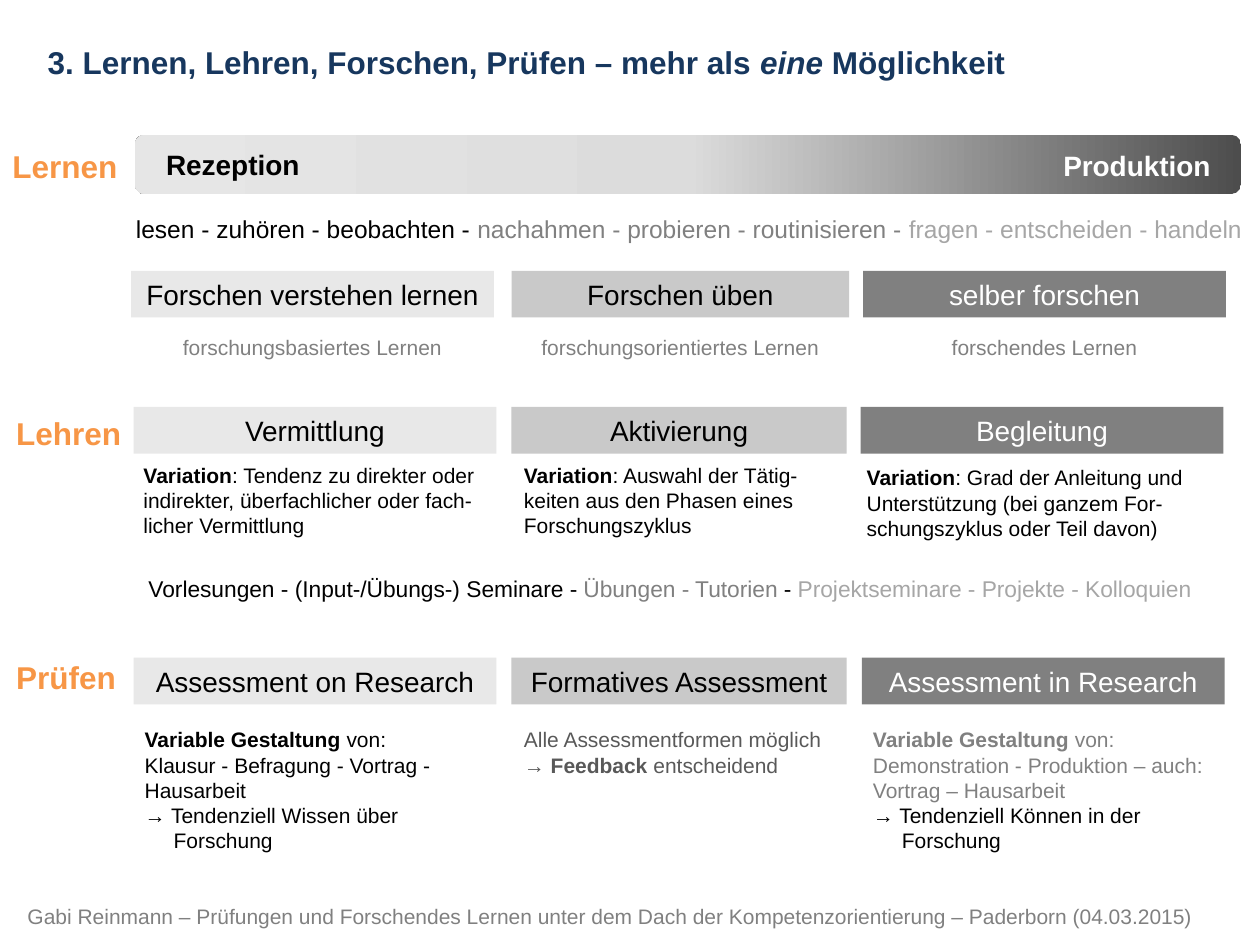
"""Builds a slide on variants of learning, teaching and assessing through research."""
from copy import deepcopy

from pptx import Presentation
from pptx import util as u
from pptx.dml.color import RGBColor
from pptx.enum import shapes, text

PX = 9144
BLACK = RGBColor(0x00, 0x00, 0x00)
WHITE = RGBColor(0xFF, 0xFF, 0xFF)
NAVY = RGBColor(0x17, 0x37, 0x5E)
ORANGE = RGBColor(0xF7, 0x96, 0x46)
CHARCOAL = RGBColor(0x4D, 0x4D, 0x4D)
DARK = RGBColor(0x59, 0x59, 0x59)
GREY = RGBColor(0x80, 0x80, 0x80)
PALE = RGBColor(0xA6, 0xA6, 0xA6)
SILVER = RGBColor(0xC9, 0xC9, 0xC9)
MIST = RGBColor(0xDC, 0xDC, 0xDC)
CLOUD = RGBColor(0xE6, 0xE6, 0xE6)
LIGHT = RGBColor(0xE8, 0xE8, 0xE8)

COLUMN_STYLES = [(LIGHT, BLACK), (SILVER, BLACK), (GREY, WHITE)]
HEADINGS = [
    (215, [(104, 288), (406, 268), (685, 288)],
     ["Forschen verstehen lernen", "Forschen üben", "selber forschen"]),
    (323, [(106, 288), (406, 266), (683, 288)],
     ["Vermittlung", "Aktivierung", "Begleitung"]),
    (522, [(106, 288), (406, 266), (684, 288)],
     ["Assessment on Research", "Formatives Assessment", "Assessment in Research"]),
]
LEARNING_FORMS = ["forschungsbasiertes Lernen", "forschungsorientiertes Lernen",
                  "forschendes Lernen"]
ROW_LABELS = [("Lernen", 0, 112, 104), ("Lehren", 3, 324, 104), ("Prüfen", 3, 517, 100)]
VARIATIONS = [
    (104, 362, 284, ": Tendenz zu direkter oder indirekter, überfachlicher oder fach-licher Vermittlung"),
    (406, 362, 266, ": Auswahl der Tätig-keiten aus den Phasen eines Forschungszyklus"),
    (678, 364, 289, ": Grad der Anleitung und Unterstützung (bei ganzem For-schungszyklus oder Teil davon)"),
]
BOLD = {"bold": True}


class SlideBuilder:
    """Holds the style and the current slide."""

    font_name = "Arial"
    hanging = 23

    def __init__(self, slide):
        self.slide = slide

    def fill_text(self, frame, paragraphs, size, color, bold=False, centered=False, wrap=True):
        """Fills a frame; a paragraph is a list of (text, run style) pairs."""
        frame.word_wrap = wrap
        frame.auto_size = text.MSO_AUTO_SIZE.SHAPE_TO_FIT_TEXT
        for index, pieces in enumerate(paragraphs):
            paragraph = frame.add_paragraph() if index else frame.paragraphs[0]
            paragraph.alignment = text.PP_ALIGN.CENTER if centered else text.PP_ALIGN.LEFT
            font = paragraph.font
            font.name, font.size, font.bold = self.font_name, u.Pt(size), bold
            font.color.rgb = color
            if pieces[0][0].startswith("→"):
                properties = paragraph._p.get_or_add_pPr()
                properties.set("marL", str(self.hanging * PX))
                properties.set("indent", str(-self.hanging * PX))
            for content, style in pieces:
                for line, part in enumerate(content.split("\n")):
                    if line:
                        paragraph.add_line_break()
                    run = paragraph.add_run()
                    run.text = part
                    if "bold" in style:
                        run.font.bold = style["bold"]
                    if "italic" in style:
                        run.font.italic = style["italic"]
                    if "color" in style:
                        run.font.color.rgb = style["color"]

    def text_box(self, left, top, width, height, paragraphs, size, color, **options):
        """Adds a text box."""
        box = self.slide.shapes.add_textbox(*(n * PX for n in (left, top, width, height)))
        self.fill_text(box.text_frame, paragraphs, size, color, **options)

    def label(self, left, top, width, height, content, size, color, bold=True):
        """Adds one unwrapped line of text."""
        self.text_box(left, top, width, height, [[(content, {})]], size, color,
                      bold=bold, wrap=False)

    def plain_shape(self, kind, left, top, width, height):
        """Adds a shape without shadow or outline."""
        shape = self.slide.shapes.add_shape(kind, *(n * PX for n in (left, top, width, height)))
        shape.shadow.inherit = False
        shape.line.fill.background()
        return shape

    def heading(self, left, top, width, content, fill, ink):
        """Adds a filled column heading."""
        shape = self.plain_shape(shapes.MSO_SHAPE.RECTANGLE, left, top, width, 37)
        shape.fill.solid()
        shape.fill.fore_color.rgb = fill
        self.fill_text(shape.text_frame, [[(content, {})]], 16, ink, centered=True)

    def gradient_bar(self, left, top, width, height, colors):
        """Adds a rounded bar shaded from right to left."""
        shape = self.plain_shape(shapes.MSO_SHAPE.ROUNDED_RECTANGLE, left, top, width, height)
        shape.fill.gradient()
        shape.fill.gradient_angle = 180
        first = shape.fill.gradient_stops[0]._gs
        for _ in colors[2:]:
            first.addnext(deepcopy(first))
        for index, (stop, color) in enumerate(zip(shape.fill.gradient_stops, colors)):
            stop.position = index / (len(colors) - 1)
            stop.color.rgb = color


def main():
    presentation = Presentation()
    presentation.slide_width, presentation.slide_height = 1000 * PX, 750 * PX
    builder = SlideBuilder(presentation.slides.add_slide(presentation.slide_layouts[6]))

    builder.label(12, 712, 946, 30, "Gabi Reinmann – Prüfungen und Forschendes Lernen unter dem Dach "
                  "der Kompetenzorientierung – Paderborn (04.03.2015)", 12, GREY, bold=False)
    builder.text_box(28, 29, 825, 40, [[
        ("3. Lernen, Lehren, Forschen, Prüfen – mehr als ", {}),
        ("eine", {"italic": True}), (" Möglichkeit", {})]], 18, NAVY, bold=True, wrap=False)

    builder.gradient_bar(107, 107, 878, 47, [CHARCOAL, MIST, CLOUD])
    builder.label(122, 112, 127, 37, "Rezeption", 16, BLACK)
    builder.label(834, 113, 139, 37, "Produktion", 16, WHITE)
    for content, left, top, width in ROW_LABELS:
        builder.label(left, top, width, 40, content, 18, ORANGE)

    builder.text_box(98, 165, 902, 34, [[
        ("lesen - zuhören - beobachten - ", {}),
        ("nachahmen - probieren - routinisieren - ", {"color": GREY}),
        ("fragen - entscheiden - handeln", {"color": PALE})]], 14, BLACK)
    builder.text_box(108, 451, 865, 32, [[
        ("Vorlesungen - (Input-/Übungs-) Seminare - ", {}),
        ("Übungen - Tutorien ", {"color": GREY}), ("- ", {}),
        ("Projektseminare - Projekte - Kolloquien", {"color": PALE})]], 13, BLACK)

    for top, columns, titles in HEADINGS:
        for (left, width), title, (fill, ink) in zip(columns, titles, COLUMN_STYLES):
            builder.heading(left, top, width, title, fill, ink)
    for (left, width), form in zip(HEADINGS[0][1], LEARNING_FORMS):
        builder.text_box(left, 261, width, 30, [[(form, {})]], 12, GREY, centered=True)
    for left, top, width, content in VARIATIONS:
        builder.text_box(left, top, width, 71, [[("Variation", BOLD), (content, {})]], 12, BLACK)

    builder.text_box(105, 572, 287, 111, [
        [("Variable Gestaltung ", BOLD),
         ("von:\nKlausur - Befragung - Vortrag - Hausarbeit", {})],
        [("→ Tendenziell Wissen über\nForschung", {})]], 12, BLACK)
    builder.text_box(406, 572, 266, 50, [
        [("Alle Assessmentformen möglich", {})],
        [("→ ", {}), ("Feedback", BOLD), (" entscheidend", {})]], 12, DARK)
    builder.text_box(683, 572, 284, 111, [
        [("Variable Gestaltung ", BOLD),
         ("von: Demonstration - Produktion – auch: Vortrag – Hausarbeit", {})],
        [("→ Tendenziell Können in der\nForschung", {"color": BLACK})]], 12, GREY)

    presentation.save("out.pptx")


if __name__ == "__main__":
    main()
